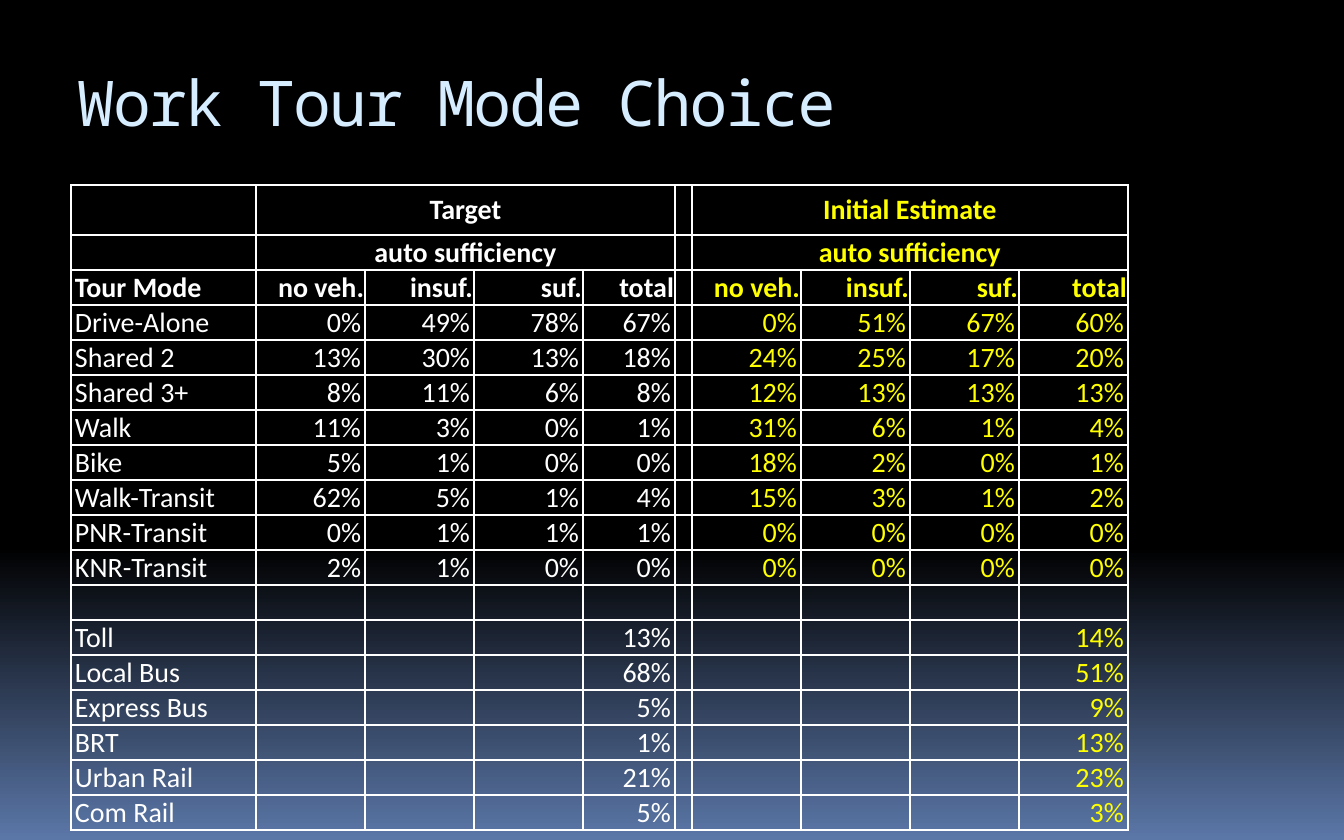
from copy import deepcopy
from dataclasses import dataclass

from lxml.etree import SubElement
from pptx import Presentation
from pptx.dml.color import RGBColor
from pptx.enum.text import MSO_ANCHOR as Anchor, PP_ALIGN as Align
from pptx.oxml.ns import qn
from pptx.slide import Slide
from pptx.table import Table, _Cell as Cell
from pptx.text.text import TextFrame
from pptx.util import Emu, Pt

EMU_PER_PX = 914400 / 84
WHITE = RGBColor(0xFF, 0xFF, 0xFF)
YELLOW = RGBColor(0xFF, 0xFF, 0x00)
PALE_BLUE = RGBColor(0xD6, 0xEC, 0xFF)
BLACK = RGBColor(0x00, 0x00, 0x00)
STEEL_BLUE = RGBColor(0x5B, 0x77, 0xA8)

COLUMN_WIDTHS = [185, 109, 109, 109, 92, 17, 109, 109, 109, 109]
HEADER_HEIGHT, ROW_HEIGHT = 50, 35
SUFFICIENCY_LEVELS = ["no veh.", "insuf.", "suf.", "total"]
FIRST_MODE_ROW = 3


@dataclass(frozen=True)
class Group:
    title: str
    first_column: int
    color: RGBColor


@dataclass(frozen=True)
class Mode:
    """Shares in percent; a single share is the total."""
    label: str
    target: tuple[int, ...] = ()
    estimate: tuple[int, ...] = ()


TARGET = Group("Target", 1, WHITE)
ESTIMATE = Group("Initial Estimate", 6, YELLOW)

MODES = [
    Mode("Drive-Alone", (0, 49, 78, 67), (0, 51, 67, 60)),
    Mode("Shared 2", (13, 30, 13, 18), (24, 25, 17, 20)),
    Mode("Shared 3+", (8, 11, 6, 8), (12, 13, 13, 13)),
    Mode("Walk", (11, 3, 0, 1), (31, 6, 1, 4)),
    Mode("Bike", (5, 1, 0, 0), (18, 2, 0, 1)),
    Mode("Walk-Transit", (62, 5, 1, 4), (15, 3, 1, 2)),
    Mode("PNR-Transit", (0, 1, 1, 1), (0, 0, 0, 0)),
    Mode("KNR-Transit", (2, 1, 0, 0), (0, 0, 0, 0)),
    Mode(""),
    Mode("Toll", (13,), (14,)),
    Mode("Local Bus", (68,), (51,)),
    Mode("Express Bus", (5,), (9,)),
    Mode("BRT", (1,), (13,)),
    Mode("Urban Rail", (21,), (23,)),
    Mode("Com Rail", (5,), (3,)),
]


def px(length: int) -> Emu:
    return Emu(round(length * EMU_PER_PX))


def write(frame: TextFrame, text: str, *, color: RGBColor, size: int = 24,
          font: str = "Calibri", bold: bool = False,
          align: Align = Align.LEFT, spacing: float = 0) -> None:
    para = frame.paragraphs[0]
    para.alignment = align
    span = para.add_run()
    span.text = text
    span.font.name = font
    span.font.size = Pt(size)
    span.font.bold = bold
    span.font.color.rgb = color
    if spacing:
        span.font._element.set("spc", str(round(spacing * 100)))


def paint_background(slide: Slide) -> None:
    fill = slide.background.fill
    fill.gradient()
    fill.gradient_angle = 270
    stop_list = slide.element.find(".//" + qn("a:gsLst"))
    stop_list.append(deepcopy(stop_list[-1]))
    colors = [(0, BLACK), (0.65, BLACK), (1, STEEL_BLUE)]
    for stop, (position, color) in zip(fill.gradient_stops, colors):
        stop.position = position
        stop.color.rgb = color


def add_title(slide: Slide) -> None:
    box = slide.shapes.add_textbox(px(64), px(63), px(1213), px(112))
    frame = box.text_frame
    frame.word_wrap = True
    frame.margin_left = frame.margin_right = px(13)
    frame.margin_top = px(1)
    write(frame, "Work Tour Mode Choice", color=PALE_BLUE, size=54,
          font="Noto Sans Mono", spacing=-1.5)


def style_cell(cell: Cell) -> None:
    """Clear the fill, tighten the margins and outline all four sides."""
    cell.margin_left = cell.margin_right = cell.margin_top = px(1)
    cell.margin_bottom = 0
    cell.fill.background()
    properties = cell._tc.get_or_add_tcPr()
    for index, side in enumerate(("lnL", "lnR", "lnT", "lnB")):
        line = SubElement(properties, qn(f"a:{side}"), w=str(Pt(1.5)))
        solid = SubElement(line, qn("a:solidFill"))
        SubElement(solid, qn("a:srgbClr"), val=str(WHITE))
        properties.insert(index, line)


def write_label(cell: Cell, text: str, bold: bool = False) -> None:
    cell.margin_left = px(4)
    cell.vertical_anchor = Anchor.BOTTOM
    write(cell.text_frame, text, color=WHITE, bold=bold)


def write_heading(cell: Cell, text: str, color: RGBColor, align: Align) -> None:
    cell.vertical_anchor = Anchor.MIDDLE
    write(cell.text_frame, text, color=color, bold=True, align=align)


def write_group(table: Table, group: Group) -> None:
    first, last = group.first_column, group.first_column + 3
    for row, text in enumerate((group.title, "auto sufficiency")):
        heading = table.cell(row, first)
        heading.merge(table.cell(row, last))
        write_heading(heading, text, group.color, Align.CENTER)
    for column, level in enumerate(SUFFICIENCY_LEVELS, first):
        write_heading(table.cell(2, column), level, group.color, Align.RIGHT)


def write_shares(table: Table, row: int, group: Group,
                 shares: tuple[int, ...]) -> None:
    start = group.first_column + len(SUFFICIENCY_LEVELS) - len(shares)
    for column, share in enumerate(shares, start):
        cell = table.cell(row, column)
        cell.margin_right = px(4)
        cell.vertical_anchor = Anchor.BOTTOM
        write(cell.text_frame, f"{share}%", color=group.color,
              align=Align.RIGHT)


def add_mode_table(slide: Slide) -> None:
    heights = [HEADER_HEIGHT] + [ROW_HEIGHT] * (FIRST_MODE_ROW - 1 + len(MODES))
    table = slide.shapes.add_table(
        len(heights), len(COLUMN_WIDTHS), px(71), px(185),
        px(sum(COLUMN_WIDTHS)), px(sum(heights))).table
    table.first_row = table.horz_banding = False
    for column, width in zip(table.columns, COLUMN_WIDTHS):
        column.width = px(width)
    for row, height in zip(table.rows, heights):
        row.height = px(height)
    for cell in table.iter_cells():
        style_cell(cell)

    for group in (TARGET, ESTIMATE):
        write_group(table, group)
    write_label(table.cell(2, 0), "Tour Mode", bold=True)
    for row, mode in enumerate(MODES, FIRST_MODE_ROW):
        if mode.label:
            write_label(table.cell(row, 0), mode.label)
        write_shares(table, row, TARGET, mode.target)
        write_shares(table, row, ESTIMATE, mode.estimate)


def main() -> None:
    deck = Presentation()
    deck.slide_width, deck.slide_height = px(1344), px(840)
    page = deck.slides.add_slide(deck.slide_layouts[6])
    paint_background(page)
    add_title(page)
    add_mode_table(page)
    deck.save("out.pptx")


if __name__ == "__main__":
    main()
